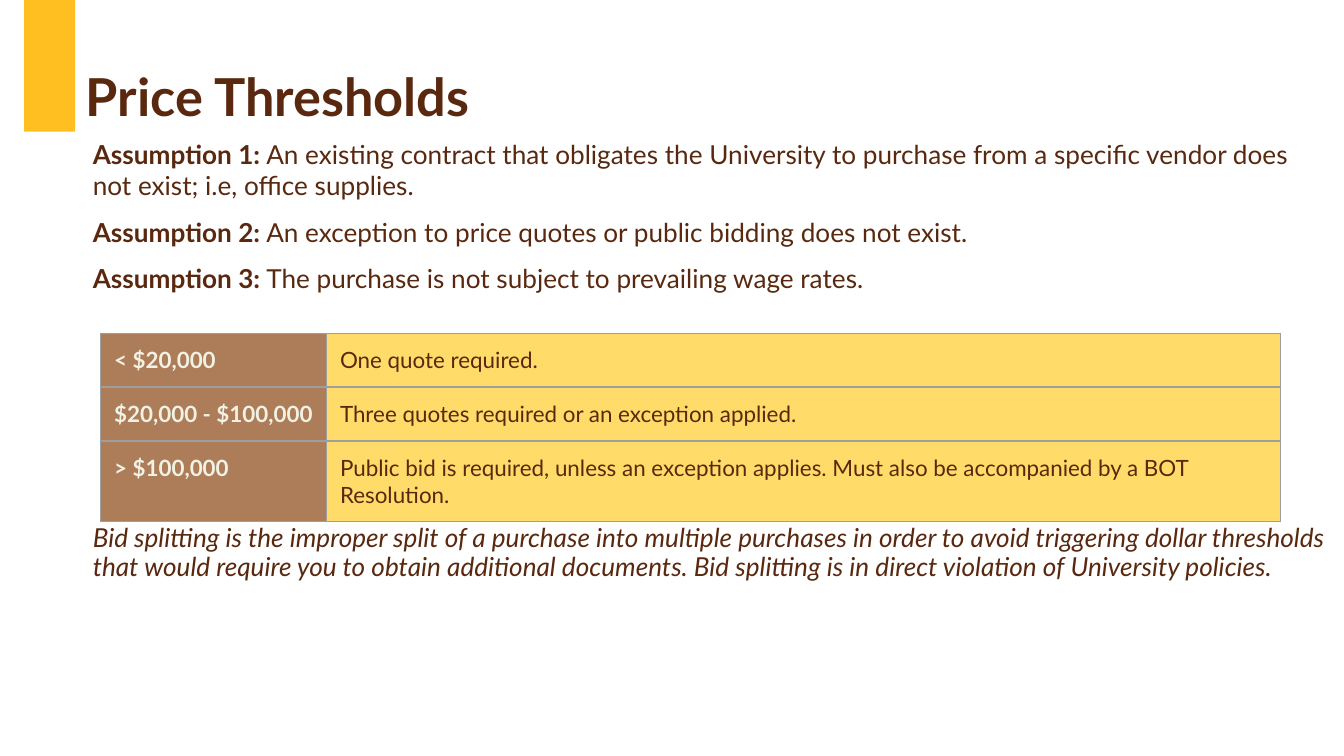
"""Build the Price Thresholds slide."""
from dataclasses import dataclass

from lxml import etree
from pptx import Presentation
from pptx.dml.color import RGBColor
from pptx.enum import shapes, text
from pptx.oxml import ns
from pptx.util import Inches, Pt

HEADING = "Price Thresholds"
ASSUMPTIONS = [
    ("Assumption 1:", " An existing contract that obligates the University to purchase "
                      "from a specific vendor does not exist; i.e, office supplies."),
    ("Assumption 2:", " An exception to price quotes or public bidding does not exist."),
    ("Assumption 3:", " The purchase is not subject to prevailing wage rates."),
]
THRESHOLDS = [
    ("< $20,000", "One quote required."),
    ("$20,000 - $100,000", "Three quotes required or an exception applied."),
    ("> $100,000", "Public bid is required, unless an exception applies. "
                   "Must also be accompanied by a BOT Resolution."),
]
BID_SPLITTING = (
    "Bid splitting is the improper split of a purchase into multiple purchases in order to "
    "avoid triggering dollar thresholds that would require you to obtain additional documents. "
    "Bid splitting is in direct violation of University policies."
)


@dataclass(frozen=True)
class Theme:
    """Hold the colours, font and type sizes."""
    font: str = "Lato"
    ink: str = "59280F"
    accent: str = "FFBF21"
    price_fill: str = "AD7C59"
    price_ink: str = "F1F2E3"
    rule_fill: str = "FFDC69"
    border: str = "9E9E9E"
    border_width: float = 0.75
    heading: int = 28
    body: int = 14
    cell: int = 12
    paragraph_gap: int = 8
    table_gap: int = 124


THEME = Theme()
COLUMN_WIDTHS = (1.68, 7.1)
ROW_HEIGHTS = (0.4, 0.4, 0.6)


def add_run(paragraph, words, size, color=THEME.ink, bold=False, italic=False):
    """Add one styled run to a paragraph."""
    run = paragraph.add_run()
    run.text = words
    run.font.name = THEME.font
    run.font.size = Pt(size)
    run.font.bold = bold
    run.font.italic = italic
    run.font.color.rgb = RGBColor.from_string(color)


def add_frame(slide, box, inset_left, inset_right):
    """Add a wrapping text box and return its text frame."""
    frame = slide.shapes.add_textbox(*map(Inches, box)).text_frame
    frame.word_wrap = True
    frame.margin_left = Inches(inset_left)
    frame.margin_right = Inches(inset_right)
    frame.margin_top = frame.margin_bottom = Inches(0.04)
    return frame


def add_borders(cell):
    """Draw a thin line on each side of a cell."""
    properties = cell._tc.get_or_add_tcPr()
    for side in ("lnL", "lnR", "lnT", "lnB"):
        line = etree.SubElement(properties, ns.qn(f"a:{side}"), w=str(Pt(THEME.border_width)))
        fill = etree.SubElement(line, ns.qn("a:solidFill"))
        etree.SubElement(fill, ns.qn("a:srgbClr"), val=THEME.border)


def add_heading(slide):
    """Add the accent bar and the heading."""
    bar = slide.shapes.add_shape(
        shapes.MSO_SHAPE.RECTANGLE, *map(Inches, (0.18, 0, 0.38, 0.98)))
    bar.shadow.inherit = False
    bar.fill.solid()
    bar.fill.fore_color.rgb = RGBColor.from_string(THEME.accent)
    bar.line.fill.background()
    frame = add_frame(slide, (0.56, 0.1, 9.35, 0.89), 0.08, 0.07)
    frame.vertical_anchor = text.MSO_ANCHOR.BOTTOM
    heading = frame.paragraphs[0]
    heading.line_spacing = 0.9
    add_run(heading, HEADING, THEME.heading, bold=True)


def add_body(slide):
    """Add the assumptions and, below the table, the remark on bid splitting."""
    frame = add_frame(slide, (0.65, 0.99, 9.35, 4.02), 0.04, 0.1)
    for index, (label, statement) in enumerate(ASSUMPTIONS):
        assumption = frame.add_paragraph() if index else frame.paragraphs[0]
        if index:
            assumption.space_before = Pt(THEME.paragraph_gap)
        add_run(assumption, label, THEME.body, bold=True)
        add_run(assumption, statement, THEME.body)
    remark = frame.add_paragraph()
    remark.line_spacing = 0.9
    remark.space_before = Pt(THEME.table_gap)
    add_run(remark, BID_SPLITTING, THEME.body, italic=True)


def add_thresholds(slide):
    """Add the table of price ranges and their rules."""
    box = (0.75, 2.48, sum(COLUMN_WIDTHS), sum(ROW_HEIGHTS))
    thresholds = slide.shapes.add_table(
        len(THRESHOLDS), len(COLUMN_WIDTHS), *map(Inches, box)).table
    thresholds.first_row = thresholds.horz_banding = False
    for column, width in zip(thresholds.columns, COLUMN_WIDTHS):
        column.width = Inches(width)
    looks = ((THEME.price_fill, THEME.price_ink, True), (THEME.rule_fill, THEME.ink, False))
    for row, height, entries in zip(thresholds.rows, ROW_HEIGHTS, THRESHOLDS):
        row.height = Inches(height)
        for cell, entry, (fill, ink, bold) in zip(row.cells, entries, looks):
            cell.margin_left = cell.margin_right = Inches(0.1)
            cell.margin_top = cell.margin_bottom = Inches(0.1)
            add_borders(cell)
            cell.fill.solid()
            cell.fill.fore_color.rgb = RGBColor.from_string(fill)
            add_run(cell.text_frame.paragraphs[0], entry, THEME.cell, ink, bold)


def main():
    """Build and save the slide."""
    deck = Presentation()
    deck.slide_width = Inches(10)
    deck.slide_height = deck.slide_width * 9 // 16
    slide = deck.slides.add_slide(deck.slide_layouts[6])
    add_heading(slide)
    add_body(slide)
    add_thresholds(slide)
    deck.save("out.pptx")


if __name__ == "__main__":
    main()
